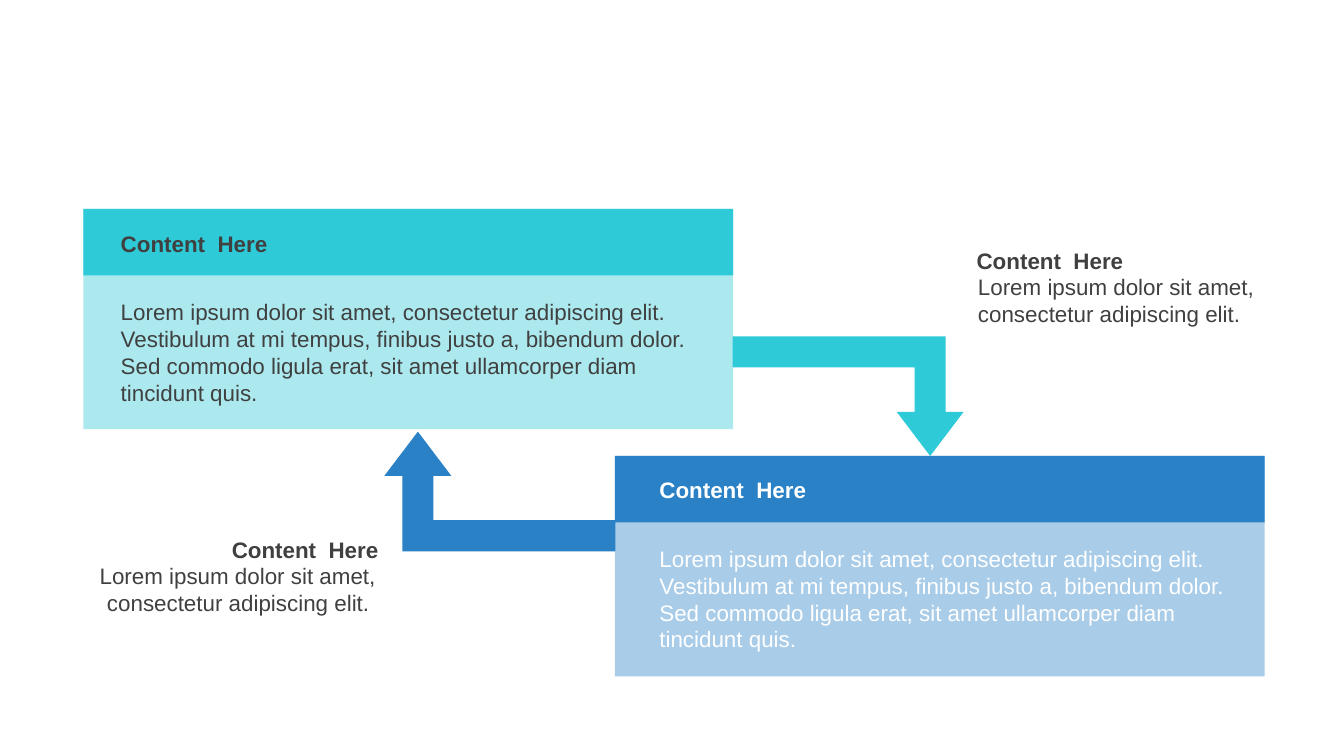
from lxml import etree
from pptx import Presentation
from pptx import util as u
from pptx.dml.color import RGBColor
from pptx.enum import shapes, text
from pptx.oxml import ns

TEAL, BLUE, DARK, WHITE = "2ECAD7", "2A81C6", "404040", "FFFFFF"
HEAD = "Content  Here"
SHORT = "Lorem ipsum dolor sit amet, consectetur adipiscing elit."
LONG = (
    SHORT + " Vestibulum at mi tempus, finibus justo a, bibendum dolor."
    " Sed commodo ligula erat, sit amet ullamcorper diam tincidunt quis."
)
CELL = 0.1


def color(code):
    return RGBColor.from_string(code)


class Deck:
    """Holds the style and the current slide; lengths are cells of a square grid."""

    font, size = "Arial", 12

    def __init__(self, wide, high):
        self.prs = Presentation()
        self.prs.slide_width, self.prs.slide_height = self.span(wide, high)
        self.slide = self.prs.slides.add_slide(self.prs.slide_layouts[6])

    def span(self, *cells):
        return [u.Inches(n * CELL) for n in cells]

    def shape(self, kind, box, fill, alpha=None):
        item = self.slide.shapes.add_shape(kind, *self.span(*box))
        item.shadow.inherit = False
        item.fill.solid()
        item.fill.fore_color.rgb = color(fill)
        item.line.fill.background()
        if alpha:
            tone = item._element.spPr.find(".//" + ns.qn("a:srgbClr"))
            etree.SubElement(tone, ns.qn("a:alpha")).set("val", str(alpha * 1000))
        return item

    def arrow(self, left, top, fill, turn=0):
        item = self.shape(shapes.MSO_SHAPE.BENT_UP_ARROW, (left, top, 17.2, 8.9), fill)
        for i, share in enumerate((0.26, 0.28, 0.37)):
            item.adjustments[i] = share
        item.rotation = turn
        item._element.spPr.find(ns.qn("a:xfrm")).set("flipH", "1")

    def label(self, box, words, ink, bold=False, align=text.PP_ALIGN.LEFT):
        frame = self.slide.shapes.add_textbox(*self.span(*box)).text_frame
        frame.word_wrap = True
        frame.auto_size = text.MSO_AUTO_SIZE.SHAPE_TO_FIT_TEXT
        para = frame.paragraphs[0]
        para.text = words
        para.alignment = align
        para.font.name, para.font.size = self.font, u.Pt(self.size)
        para.font.bold = bold
        para.font.color.rgb = color(ink)

    def panel(self, left, top, fill):
        rect = shapes.MSO_SHAPE.RECTANGLE
        self.shape(rect, (left, top, 48.35, 16.4), fill, 40)
        self.shape(rect, (left, top, 48.35, 4.95), fill)

    def copy(self, left, top, ink):
        self.label((left, top + 5.1, 44.9, 9.1), LONG, ink)
        self.label((left, top, 44.9, 3), HEAD, ink, True)

    def note(self, left, top, words, align):
        self.label((left + 0.1, top + 1.95, 22.9, 5), words, DARK, align=align)
        self.label((left, top, 23.2, 3), HEAD, DARK, True, align)


def main():
    deck = Deck(100, 56.25)
    deck.panel(6.2, 15.54, TEAL)
    deck.panel(45.75, 33.93, BLUE)
    deck.arrow(28.6, 32.12, BLUE)
    deck.arrow(54.5, 25.03, TEAL, 180)
    deck.copy(8, 16.6, DARK)
    deck.copy(48.08, 34.95, WHITE)
    deck.note(71.68, 17.9, SHORT, text.PP_ALIGN.LEFT)
    deck.note(5.95, 39.4, SHORT + " ", text.PP_ALIGN.RIGHT)
    deck.prs.save("out.pptx")


if __name__ == "__main__":
    main()
